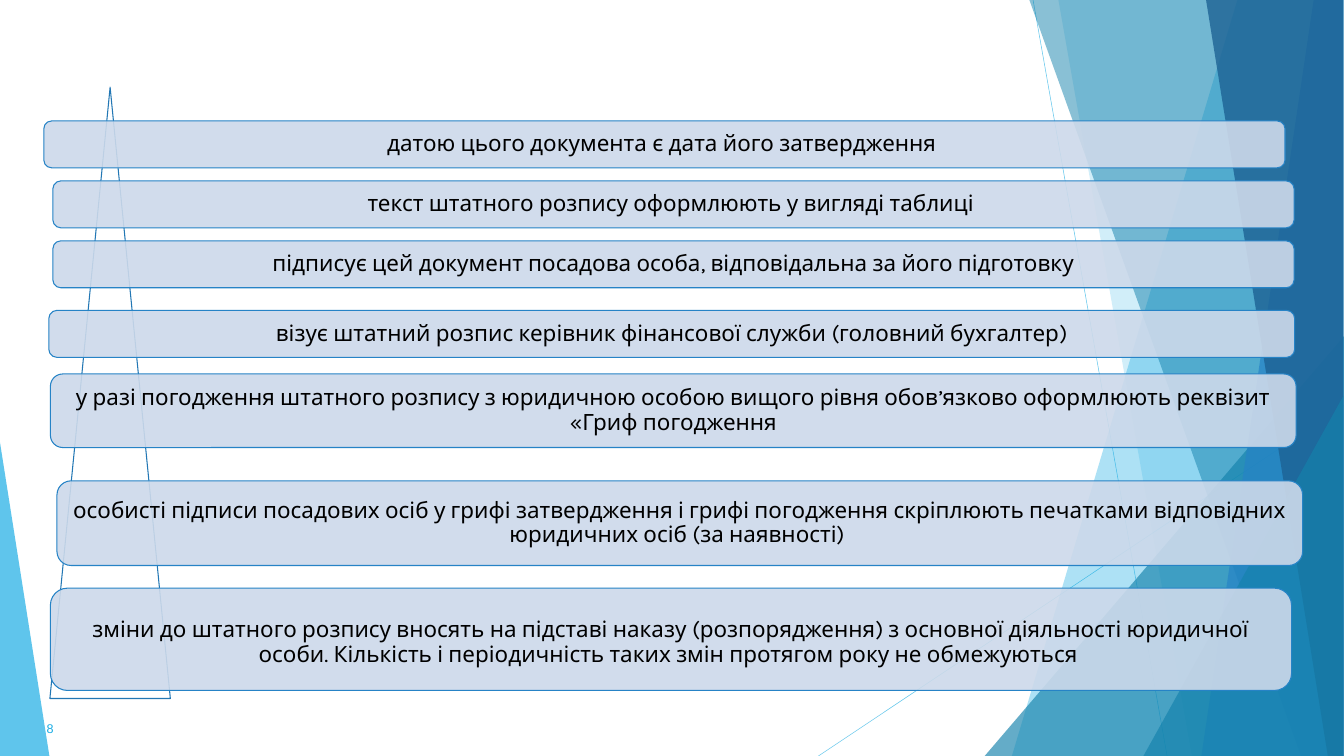
"""Builds a slide listing the rules for drawing up a staffing table."""
from lxml import etree
from pptx import Presentation
from pptx.dml.color import RGBColor
from pptx.enum.shapes import MSO_CONNECTOR, MSO_SHAPE
from pptx.enum.text import MSO_ANCHOR, PP_ALIGN
from pptx.oxml.ns import qn
from pptx.util import Inches, Pt

TRIANGLE = MSO_SHAPE.ISOSCELES_TRIANGLE
ROUNDED = MSO_SHAPE.ROUNDED_RECTANGLE
STRAIGHT = MSO_CONNECTOR.STRAIGHT
MIDDLE = MSO_ANCHOR.MIDDLE
CENTER, RIGHT = PP_ALIGN.CENTER, PP_ALIGN.RIGHT

W, H = 26.67, 15
TOP = -0.02
EDGE = 26.66
INSET = 0.13

COLORS = {
    "sky": "1CADE4", "teal": "1482AC", "blue": "2683C6", "navy": "1D6294",
    "pale": "CDD9EA", "outline": "2277B4", "white": "FFFFFF", "black": "000000",
}

# left, top, width, height, extra top inset, text
RULES = [
    (0.87, 2.4, 24.63, 0.93, 0, "датою цього документа є дата його затвердження "),
    (1.05, 3.59, 24.63, 0.93, 0, "текст штатного розпису оформлюють у вигляді таблиці "),
    (1.05, 4.78, 24.63, 0.93, 0,
     "підписує цей документ посадова особа, відповідальна за його підготовку"),
    (0.97, 6.16, 24.72, 0.93, 0,
     "візує штатний розпис керівник фінансової служби (головний бухгалтер)"),
    (1, 7.42, 24.72, 1.46, 0,
     "у разі погодження штатного розпису з юридичною особою вищого рівня "
     "обов’язково оформлюють реквізит «Гриф погодження"),
    (1.13, 9.54, 24.72, 1.68, 0,
     "особисті підписи посадових осіб у грифі затвердження і грифі погодження "
     "скріплюють печатками відповідних юридичних осіб (за наявності) "),
    (1, 11.67, 24.63, 2.03, 0.14,
     "зміни до штатного розпису вносять на підставі наказу (розпорядження) з "
     "основної діяльності юридичної особи. Кількість і періодичність таких змін "
     "протягом року не обмежуються "),
]

RAYS = [(20.5, 0, 23.16, H), (EDGE, 8.05, 16.24, H)]

# bands: top left, bottom left, colour, opacity
# triangles: left, top, width, height, apex, colour, opacity
FACETS = [
    ("band", (24.56, 20.08), "sky", 36),
    ("band", (21, 23.65), "sky", 20),
    ("triangle", (19.54, 6.67, 7.13, 8.33, 1), "teal", 66),
    ("band", (20.42, 25.82), "teal", 50),
    ("band", (26.07, 23.84), "blue", 70),
    ("band", (23.93, 26.35), "navy", 80),
    ("triangle", (22.69, 7.85, 3.97, 7.15, 1), "teal", 66),
    ("triangle", (0, 8.78, 0.98, 6.22, 0), "sky", 70),
]


def paint(fill, color, opacity=100):
    fill.solid()
    fill.fore_color.rgb = RGBColor.from_string(COLORS[color])
    if opacity < 100:
        clr = fill._xPr.find(qn("a:solidFill"))[0]
        etree.SubElement(clr, qn("a:alpha")).set("val", str(opacity * 1000))


def style(sp, color, opacity=100, line=None):
    sp.shadow.inherit = False
    paint(sp.fill, color, opacity)
    if line:
        paint(sp.line.fill, line)
        sp.line.width = Pt(1.5)
    else:
        sp.line.fill.background()


def add_preset(s, kind, box, adj=None):
    sp = s.shapes.add_shape(kind, *map(Inches, box))
    if adj is not None:
        sp.adjustments[0] = adj
    return sp


def add_band(s, top_x, bottom_x):
    points = [(EDGE, TOP), (EDGE, H), (bottom_x, H)]
    builder = s.shapes.build_freeform(Inches(top_x), Inches(TOP))
    builder.add_line_segments([(Inches(x), Inches(y)) for x, y in points])
    return builder.convert_to_shape()


def add_ray(s, ends):
    line = s.shapes.add_connector(STRAIGHT, *map(Inches, ends))
    paint(line.line.fill, "sky", 70)
    line.line.width = Pt(0.75)
    etree.SubElement(line._element.spPr, qn("a:effectLst"))


def write(sp, text, *, size, font, color, align, spacing=None):
    tf = sp.text_frame
    tf.word_wrap = True
    tf.vertical_anchor = MIDDLE
    p = tf.paragraphs[0]
    p.alignment = align
    p.line_spacing = spacing
    r = p.add_run()
    r.text = text
    r.font.size = Pt(size)
    r.font.name = font
    r.font.color.rgb = RGBColor.from_string(COLORS[color])
    return tf


def main():
    prs = Presentation()
    prs.slide_width, prs.slide_height = Inches(W), Inches(H)
    s = prs.slides.add_slide(prs.slide_layouts[6])

    for ends in RAYS:
        add_ray(s, ends)
    for kind, geometry, color, opacity in FACETS:
        if kind == "band":
            sp = add_band(s, *geometry)
        else:
            sp = add_preset(s, TRIANGLE, geometry[:4], geometry[4])
        style(sp, color, opacity)

    number = s.shapes.add_textbox(*map(Inches, (0.21, 14.05, 0.95, 0.8)))
    write(number, "8", size=18, font="Arial", color="sky", align=RIGHT)

    spire = add_preset(s, TRIANGLE, (0.99, 1.73, 2.39, 12.13))
    style(spire, "white", line="outline")

    for *box, extra, text in RULES:
        sp = add_preset(s, ROUNDED, box)
        style(sp, "pale", 90, line="blue")
        tf = write(sp, text, size=32, font="Karla", color="black",
                   align=CENTER, spacing=0.9)
        tf.margin_left = tf.margin_right = tf.margin_bottom = Inches(INSET)
        tf.margin_top = Inches(INSET + extra)

    prs.save("out.pptx")


if __name__ == "__main__":
    main()
